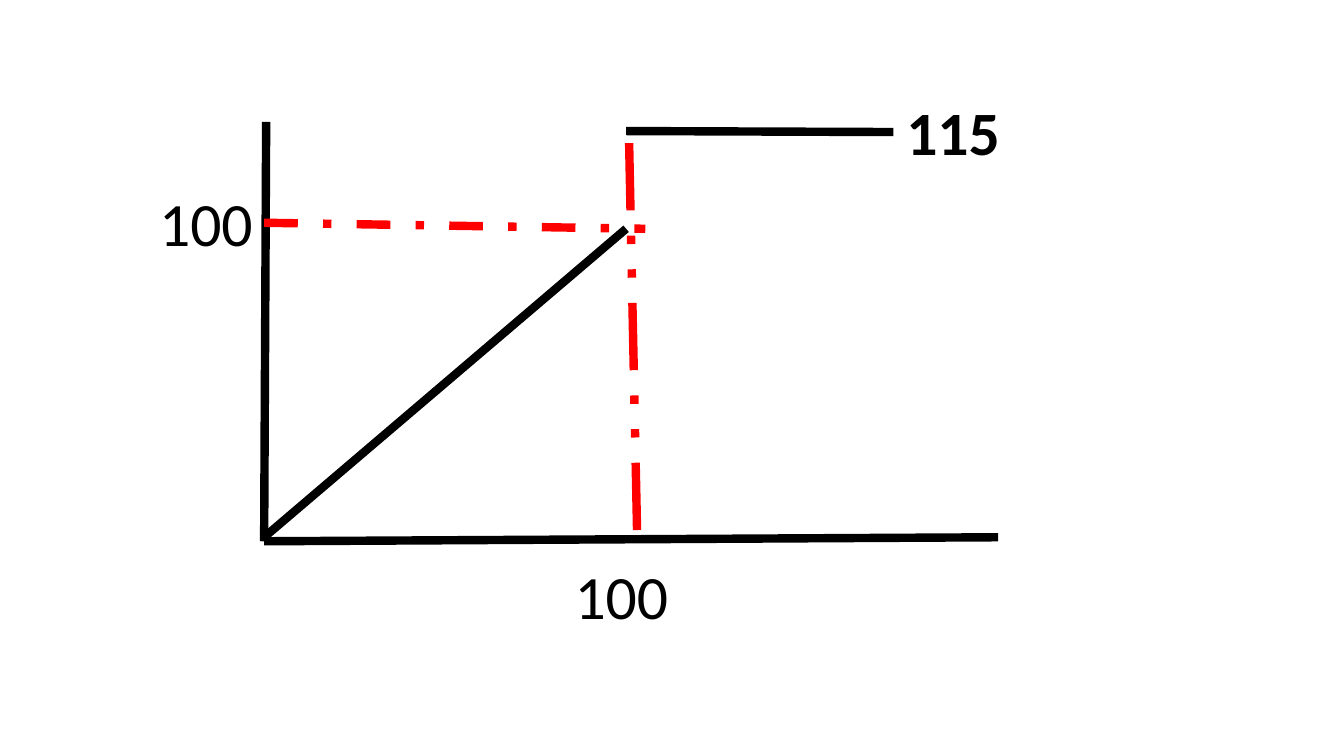
from pptx import Presentation
from pptx.dml.color import RGBColor
from pptx.enum.dml import MSO_LINE
from pptx.enum.shapes import MSO_CONNECTOR
from pptx.enum.text import MSO_AUTO_SIZE
from pptx.oxml.ns import qn
from pptx.util import Emu, Pt
from lxml import etree

STRAIGHT = MSO_CONNECTOR.STRAIGHT
FIT_SHAPE = MSO_AUTO_SIZE.SHAPE_TO_FIT_TEXT
DASH_DOT = MSO_LINE.DASH_DOT
DASH_DOT_DOT = MSO_LINE.DASH_DOT_DOT
BLACK = "000000"
RED = "FF0000"
BLANK_LAYOUT = 6


def px(length):
    """Turn px, at 100 to the inch, into EMU."""
    return Emu(length * 9144)


def color(hex_value):
    return RGBColor.from_string(hex_value)


presentation = Presentation()
presentation.slide_width = px(1333)
presentation.slide_height = px(750)
slide = presentation.slides.add_slide(presentation.slide_layouts[BLANK_LAYOUT])

# Axes, graph pieces and guides: start, end, colour, dash
lines = [
    ((262, 537), (990, 533), BLACK, None),
    ((262, 537), (264, 121), BLACK, None),
    ((262, 221), (640, 227), RED, DASH_DOT),
    ((621, 130), (886, 131), BLACK, None),
    ((624, 142), (632, 533), RED, DASH_DOT_DOT),
    ((621, 227), (262, 533), BLACK, None),
]
for start, end, line_color, dash in lines:
    connector = slide.shapes.add_connector(
        STRAIGHT, px(start[0]), px(start[1]), px(end[0]), px(end[1])
    )
    connector.line.color.rgb = color(line_color)
    connector.line.width = Pt(6)
    if dash is not None:
        connector.line.dash_style = dash
    etree.SubElement(connector._element.spPr, qn("a:effectLst"))

# Value labels: text, left, top, width, indent level, bold
labels = [
    ("100", 98, 179, 164, 1, False),
    ("100", 560, 549, 159, 0, False),
    ("115", 889, 88, 141, 0, True),
]
for text, left, top, width, level, bold in labels:
    label = slide.shapes.add_textbox(px(left), px(top), px(width), px(84))
    label.text_frame.word_wrap = True
    label.text_frame.auto_size = FIT_SHAPE
    paragraph = label.text_frame.paragraphs[0]
    paragraph.level = level
    run = paragraph.add_run()
    run.text = text
    run.font.name = "Calibri"
    run.font.size = Pt(44)
    run.font.bold = bold
    run.font.color.rgb = color(BLACK)

presentation.save("out.pptx")
